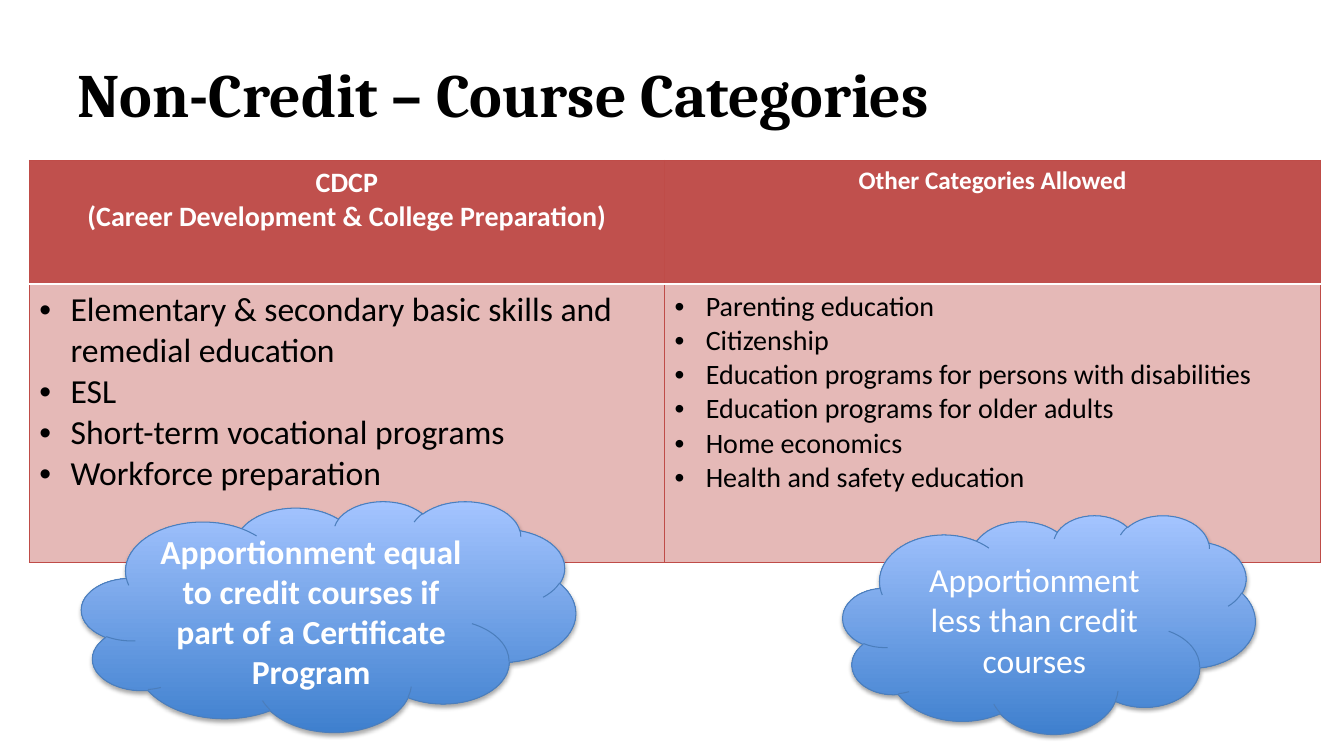
from lxml.etree import SubElement
from pptx import Presentation
from pptx.dml.color import RGBColor
from pptx.enum.shapes import MSO_SHAPE
from pptx.enum.text import MSO_ANCHOR, PP_ALIGN
from pptx.oxml.ns import qn
from pptx.util import Inches, Pt

TITLE = "Non-Credit – Course Categories"
COLUMNS = [
    {"width": 6.3, "head_size": 20, "body_size": 24,
     "head": ["CDCP", "(Career Development & College Preparation)"],
     "body": ["Elementary & secondary basic skills and remedial education", "ESL",
              "Short-term vocational programs", "Workforce preparation"]},
    {"width": 6.51, "head_size": 18, "body_size": 20,
     "head": ["Other Categories Allowed"],
     "body": ["Parenting education", "Citizenship",
              "Education programs for persons with disabilities",
              "Education programs for older adults", "Home economics",
              "Health and safety education"]},
]
ROW_HEIGHTS = [1.23, 2.76]
CLOUDS = [
    ("Apportionment equal to credit courses if part of a Certificate Program",
     (0.81, 4.97, 4.9, 2.29), True),
    ("Apportionment less than credit courses", (8.36, 5.11, 4.09, 2.17), False),
]
THEME = {
    "title_font": "Cambria", "font": "Calibri", "title_size": 44, "cloud_size": 24,
    "black": "000000", "white": "FFFFFF", "red": "C0504D", "border": "BF4C48",
    "cloud": ["3F80CE", "A4C4FF"], "cloud_line": "4B7EBC", "body_alpha": 40,
}


def child(parent, tag, **attrs):
    return SubElement(parent, qn(tag), {k: str(v) for k, v in attrs.items()})


def set_font(font, color, **values):
    for name, value in values.items():
        setattr(font, name, value)
    font.color.rgb = RGBColor.from_string(color)


def write(tf, lines, align, color, bullet=False, **values):
    for i, line in enumerate(lines):
        p = tf.paragraphs[0] if i == 0 else tf.add_paragraph()
        p.alignment = align
        if bullet:
            pPr = p._p.get_or_add_pPr()
            pPr.set("marL", str(Inches(0.31)))
            pPr.set("indent", str(Inches(-0.31)))
            child(pPr, "a:buFont", typeface="Arial")
            child(pPr, "a:buChar", char="•")
        r = p.add_run()
        r.text = line
        set_font(r.font, color, **values)


def set_borders(cell, **edges):
    tcPr = cell._tc.get_or_add_tcPr()
    for edge in "LRTB":
        color, width = edges.get(edge, (THEME["border"], 0.75))
        ln = child(tcPr, f"a:ln{edge}", w=Pt(width))
        child(child(ln, "a:solidFill"), "a:srgbClr", val=color)


def add_categories(s):
    widths = [c["width"] for c in COLUMNS]
    table = s.shapes.add_table(2, len(COLUMNS), Inches(0.29), Inches(1.59),
                               Inches(sum(widths)), Inches(sum(ROW_HEIGHTS))).table
    for row, height in zip(table.rows, ROW_HEIGHTS):
        row.height = Inches(height)
    rule = (THEME["white"], 2)
    for i, column in enumerate(COLUMNS):
        table.columns[i].width = Inches(column["width"])
        head, body = table.cell(0, i), table.cell(1, i)
        set_borders(head, B=rule)
        set_borders(body, T=rule)
        for cell in (head, body):
            cell.fill.solid()
            cell.fill.fore_color.rgb = RGBColor.from_string(THEME["red"])
        tint = body._tc.tcPr.find(qn("a:solidFill"))[0]
        child(tint, "a:alpha", val=THEME["body_alpha"] * 1000)
        write(head.text_frame, column["head"], PP_ALIGN.CENTER, THEME["white"],
              name=THEME["font"], size=Pt(column["head_size"]), bold=True)
        write(body.text_frame, column["body"], PP_ALIGN.LEFT, THEME["black"], bullet=True,
              name=THEME["font"], size=Pt(column["body_size"]), bold=False)


def add_cloud(s, text, box, bold):
    sp = s.shapes.add_shape(MSO_SHAPE.CLOUD, *map(Inches, box))
    sp.fill.gradient()
    sp.fill.gradient_angle = 90
    for stop, color, position in zip(sp.fill.gradient_stops, THEME["cloud"], (0, 1)):
        stop.color.rgb = RGBColor.from_string(color)
        stop.position = position
    sp.line.color.rgb = RGBColor.from_string(THEME["cloud_line"])
    sp.line.width = Pt(0.75)
    sp.shadow.inherit = False
    shadow = child(sp._element.spPr.find(qn("a:effectLst")), "a:outerShdw",
                   blurRad=Pt(3.1), dist=Pt(1.8), dir=5400000, rotWithShape=0)
    child(child(shadow, "a:srgbClr", val=THEME["black"]), "a:alpha", val=35000)
    tf = sp.text_frame
    tf.word_wrap = True
    tf.vertical_anchor = MSO_ANCHOR.MIDDLE
    write(tf, [text], PP_ALIGN.CENTER, THEME["white"],
          name=THEME["font"], size=Pt(THEME["cloud_size"]), bold=bold)


def main():
    prs = Presentation()
    prs.slide_width, prs.slide_height = Inches(13.33), Inches(7.5)
    s = prs.slides.add_slide(prs.slide_layouts[5])
    title = s.shapes.title
    for name, value in zip(("left", "top", "width", "height"), (0.67, 0.3, 12, 1.25)):
        setattr(title, name, Inches(value))
    title.text_frame.vertical_anchor = MSO_ANCHOR.MIDDLE
    write(title.text_frame, [TITLE], PP_ALIGN.LEFT, THEME["black"],
          name=THEME["title_font"], size=Pt(THEME["title_size"]), bold=True)
    add_categories(s)
    for cloud in CLOUDS:
        add_cloud(s, *cloud)
    prs.save("out.pptx")


if __name__ == "__main__":
    main()
